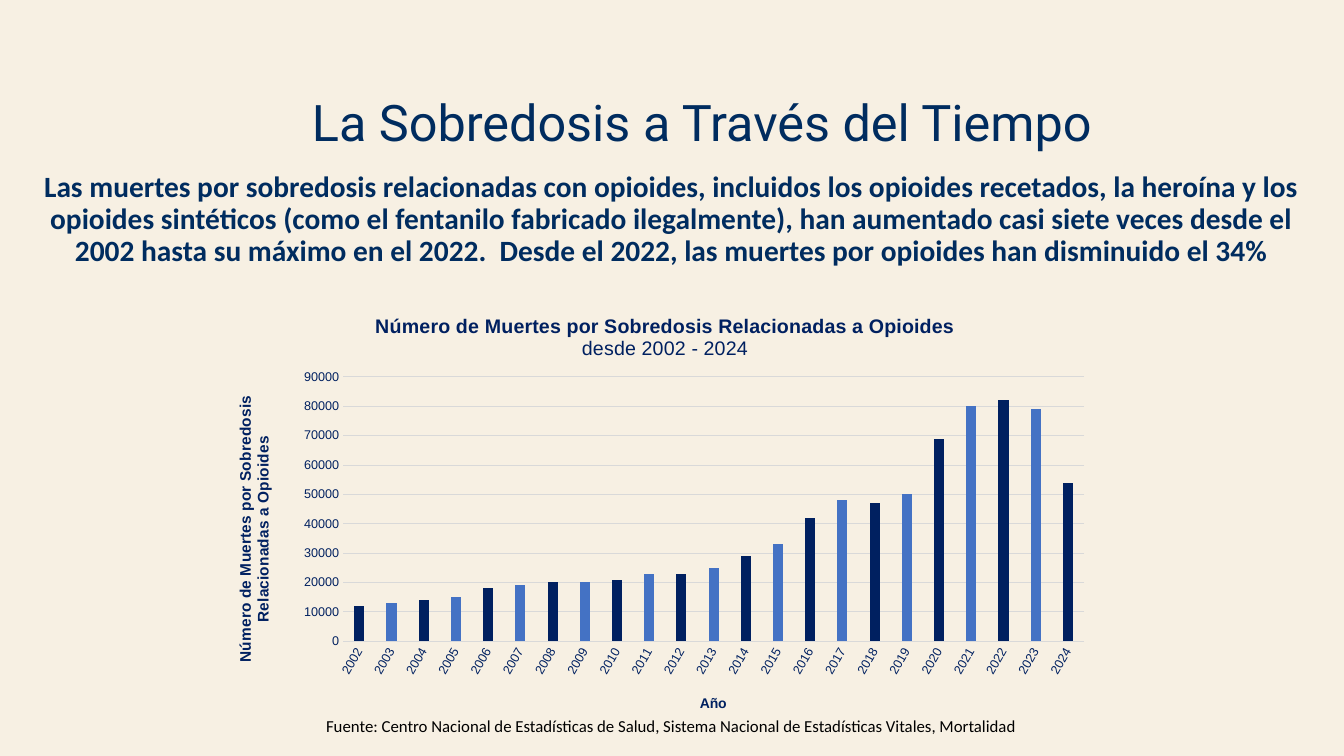
from pptx import Presentation
from pptx.chart.data import CategoryChartData
from pptx.dml.color import RGBColor
from pptx.enum.chart import XL_CHART_TYPE, XL_TICK_MARK
from pptx.enum.text import MSO_ANCHOR, PP_ALIGN
from pptx.oxml import parse_xml
from pptx.oxml.ns import nsdecls
from pptx.util import Inches, Pt

COLORS = {"cream": "F7F0E3", "navy": "002C5F", "ink": "002060",
          "blue": "4472C4", "grid": "D9D9D9", "black": "000000"}
CELL = 0.1

DEATHS = [12000, 13000, 14000, 15000, 18000, 19000, 20000, 20000, 21000, 23000,
          23000, 25000, 29000, 33000, 42000, 48000, 47000, 50000, 69000, 80000,
          82000, 79000, 54000]
TOPIC = "Número de Muertes por Sobredosis Relacionadas a Opioides"
INTRO = ("Las muertes por sobredosis relacionadas con opioides, incluidos los opioides "
         "recetados, la heroína y los opioides sintéticos (como el fentanilo fabricado "
         "ilegalmente), han aumentado casi siete veces desde el 2002 hasta su máximo en "
         "el 2022.  Desde el 2022, las muertes por opioides han disminuido el 34%")
SOURCE = ("Fuente: Centro Nacional de Estadísticas de Salud, Sistema Nacional de "
          "Estadísticas Vitales, Mortalidad")


def rgb(name):
    return RGBColor.from_string(COLORS[name])


class Deck:
    def __init__(self, cols, rows):
        self.prs = Presentation()
        self.prs.slide_width, self.prs.slide_height = self.grid(cols, rows)
        self.s = self.prs.slides.add_slide(self.prs.slide_layouts[6])
        fill = self.s.background.fill
        fill.solid()
        fill.fore_color.rgb = rgb("cream")

    def grid(self, *cells):
        return [Inches(n * CELL) for n in cells]

    def font(self, font, color, **values):
        for key, value in values.items():
            setattr(font, key, value)
        font.color.rgb = rgb(color)

    def text(self, box, words, color, anchor=MSO_ANCHOR.TOP, **values):
        tf = self.s.shapes.add_textbox(*self.grid(*box)).text_frame
        for key, value in {"word_wrap": True, "vertical_anchor": anchor}.items():
            setattr(tf, key, value)
        p = tf.paragraphs[0]
        for key, value in {"alignment": PP_ALIGN.CENTER, "line_spacing": 0.9}.items():
            setattr(p, key, value)
        r = p.add_run()
        r.text = words
        self.font(r.font, color, **values)

    def place(self, element, index, inner=False, **shares):
        for old in element.xpath("c:layout"):
            element.remove(old)
        target = '<c:layoutTarget val="inner"/>' if inner else ""
        modes = "".join(f'<c:{k}Mode val="edge"/>' for k in "xy")
        values = "".join(f'<c:{k} val="{v}"/>' for k, v in shares.items())
        element.insert(index, parse_xml(
            f'<c:layout {nsdecls("c")}><c:manualLayout>{target}{modes}{values}'
            "</c:manualLayout></c:layout>"))

    def chart_title(self, title, lines, size, x, y):
        tf = title.text_frame
        for i, (words, bold) in enumerate(lines):
            p = tf.add_paragraph() if i else tf.paragraphs[0]
            r = p.add_run()
            r.text = words
            self.font(r.font, "ink", name="Arial", size=Pt(size), bold=bold)
        self.place(title._element, 1, x=x, y=y)

    def rotate(self, element, degrees):
        for body in element.xpath(".//a:bodyPr"):
            body.set("rot", str(degrees * 60000))
            body.set("vert", "horz")

    def axis(self, axis, **values):
        for key, value in values.items():
            setattr(axis, key, value)
        axis.major_tick_mark = axis.minor_tick_mark = XL_TICK_MARK.NONE
        self.font(axis.tick_labels.font, "ink", name="Arial", size=Pt(9))

    def line(self, line):
        line.color.rgb = rgb("grid")
        line.width = Pt(0.75)

    def columns(self, box, first_year, values):
        data = CategoryChartData()
        data.categories = [str(first_year + i) for i in range(len(values))]
        data.add_series("Series 1", values)
        chart = self.s.shapes.add_chart(
            XL_CHART_TYPE.COLUMN_CLUSTERED, *self.grid(*box), data).chart
        chart.has_legend = False
        self.font(chart.font, "black", name="Arial", size=Pt(10))
        plot = chart.plots[0]
        for key, value in {"gap_width": 219, "overlap": -27, "vary_by_categories": False}.items():
            setattr(plot, key, value)
        series = plot.series[0]
        bars = [series] + [series.points[i] for i in range(0, len(values), 2)]
        for bar, color in zip(bars, ["blue"] + ["ink"] * len(values)):
            bar.format.fill.solid()
            bar.format.fill.fore_color.rgb = rgb(color)
        years, counts = chart.category_axis, chart.value_axis
        self.axis(years)
        self.axis(counts, minimum_scale=0, maximum_scale=90000, major_unit=10000)
        counts.tick_labels.number_format = "0"
        counts.tick_labels.number_format_is_linked = False
        self.rotate(years._element, -60)
        self.line(years.format.line)
        self.line(counts.major_gridlines.format.line)
        counts.format.line.fill.background()
        self.chart_title(chart.chart_title,
                         [(TOPIC, True), ("desde 2002 - 2024", False)], 14, 0.17, 0.04)
        self.chart_title(years.axis_title, [("Año", True)], 10, 0.54, 0.92)
        self.chart_title(counts.axis_title, [(TOPIC, True)], 11, 0.01, 0.23)
        self.rotate(counts.axis_title._element, -90)
        self.place(chart._chartSpace.chart.plotArea, 0, inner=True,
                   x=0.137, y=0.193, w=0.843, h=0.61)


def main():
    deck = Deck(133.33, 75)
    deck.text((18.2, 70.7, 96.8, 4.9), SOURCE, "black", name="Calibri", size=Pt(12))
    deck.text((3, 16.6, 127.2, 10.6), INTRO, "navy", name="Calibri", size=Pt(21), bold=True)
    deck.text((9.1, 7.8, 121.1, 7.8), "La Sobredosis a Través del Tiempo", "navy",
              MSO_ANCHOR.BOTTOM, name="Roboto", size=Pt(36))
    deck.columns((22.1, 29.1, 87.2, 43), 2002, DEATHS)
    deck.prs.save("out.pptx")


if __name__ == "__main__":
    main()
